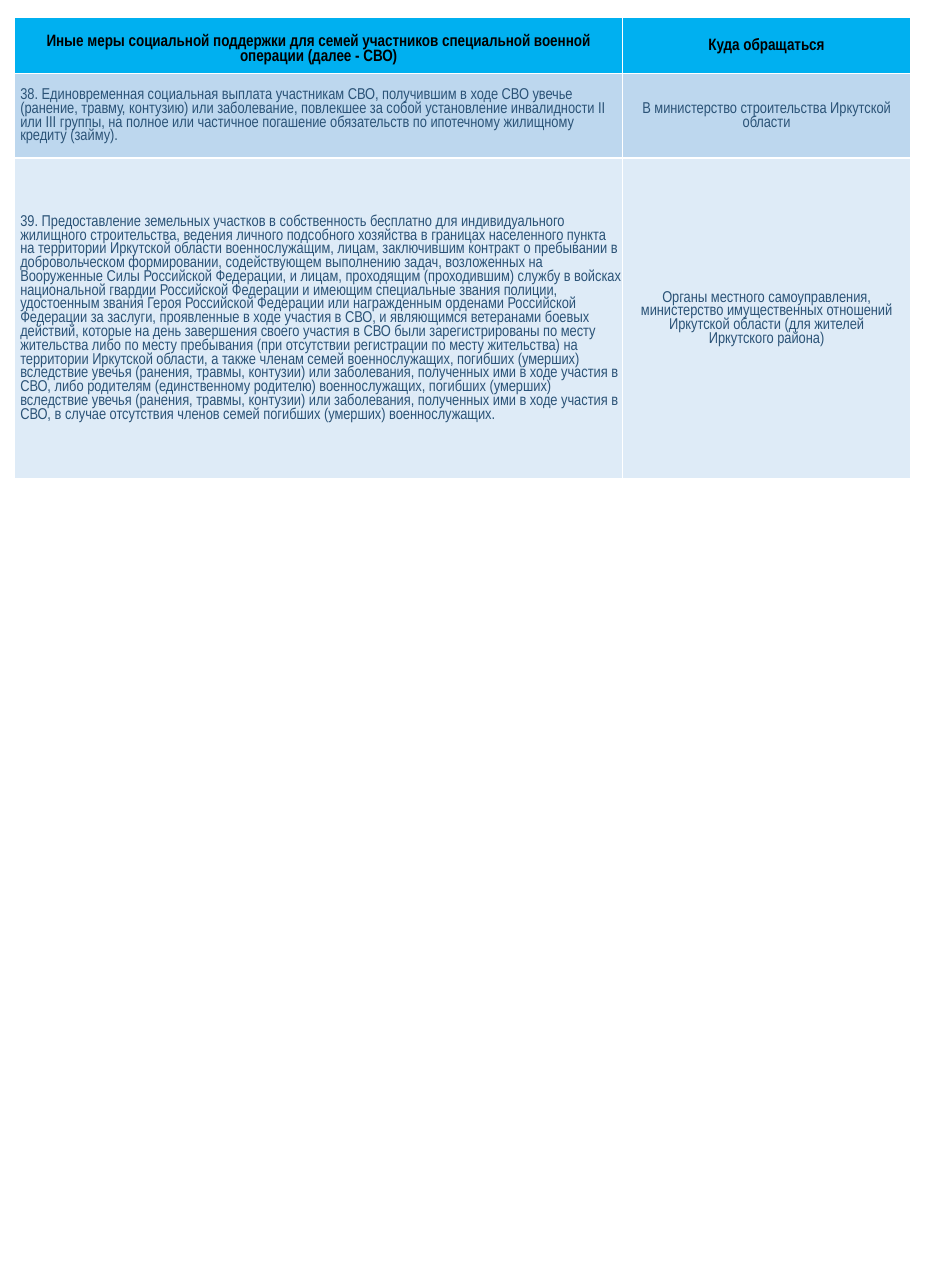
from lxml.etree import SubElement as Sub
from pptx import Presentation as Deck
from pptx.dml.color import RGBColor as Rgb
from pptx.enum.text import MSO_ANCHOR as Anchor, PP_ALIGN as Align
from pptx.oxml.ns import qn
from pptx.util import Inches, Pt

FONT = "Arial Narrow"
COLS = [5.39, 2.55]
ROWS = [0.5, 0.75, 2.84]
FILLS = ["00B0F0", "BDD7EE", "DEEBF7"]

HEADS = [
    "Иные меры социальной поддержки для семей участников специальной "
    "военной операции (далее - СВО)",
    "Куда обращаться",
]
PAYMENT = [
    "38. Единовременная социальная выплата участникам СВО, получившим в ходе "
    "СВО увечье (ранение, травму, контузию) или заболевание, повлекшее за собой "
    "установление инвалидности II или III группы, на полное или частичное "
    "погашение обязательств по ипотечному жилищному кредиту (займу).",
    "В министерство строительства Иркутской области",
]
# Clauses of the long measure, joined by spaces
CLAUSES = [
    "39. Предоставление земельных участков в собственность бесплатно для "
    "индивидуального жилищного строительства, ведения личного подсобного "
    "хозяйства в границах населенного пункта на территории Иркутской области",
    "военнослужащим, лицам, заключившим контракт о пребывании в добровольческом "
    "формировании, содействующем выполнению задач, возложенных на Вооруженные "
    "Силы Российской Федерации, и лицам, проходящим (проходившим) службу в "
    "войсках национальной гвардии Российской Федерации и имеющим специальные "
    "звания полиции,",
    "удостоенным звания Героя Российской Федерации или "
    "награжденным орденами Российской Федерации за заслуги, проявленные в ходе "
    "участия в СВО, и являющимся ветеранами боевых действий, которые на день "
    "завершения своего участия в СВО были зарегистрированы по месту жительства "
    "либо по месту пребывания (при отсутствии регистрации по месту жительства) "
    "на территории Иркутской области,",
    "а также членам семей военнослужащих, "
    "погибших (умерших) вследствие увечья (ранения, травмы, контузии) или "
    "заболевания, полученных ими в ходе участия в СВО,",
    "либо родителям "
    "(единственному родителю) военнослужащих, погибших (умерших) вследствие "
    "увечья (ранения, травмы, контузии) или заболевания, полученных ими в ходе "
    "участия в СВО, в случае отсутствия членов семей погибших (умерших) "
    "военнослужащих.",
]
LAND = [
    " ".join(CLAUSES),
    "Органы местного самоуправления, министерство имущественных отношений "
    "Иркутской области (для жителей\nИркутского района)",
]


def color(code):
    return Rgb.from_string(code)


def write(frame, text, size=10, ink="2B5377", bold=False, align=Align.LEFT):
    """Put each line of text in its own formatted paragraph."""
    frame.text = text
    for para in frame.paragraphs:
        para.alignment = align
        para.line_spacing = 0.95
        font = para.runs[0].font
        font.name, font.size, font.bold = FONT, Pt(size), bold
        font.color.rgb = color(ink)


def border(cell, code="FFFFFF", width=1):
    props = cell._tc.get_or_add_tcPr()
    for spot, side in enumerate(("lnL", "lnR", "lnT", "lnB")):
        line = Sub(props, qn(f"a:{side}"), w=str(Pt(width)))
        Sub(Sub(line, qn("a:solidFill")), qn("a:srgbClr"), val=code)
        props.insert(spot, line)


def paint(cell, code, left=0.01, top=0.01):
    """Set the fill, borders and insets of a cell."""
    cell.fill.solid()
    cell.fill.fore_color.rgb = color(code)
    border(cell)
    cell.vertical_anchor = Anchor.MIDDLE
    cell.margin_left, cell.margin_top = Inches(left), Inches(top)
    cell.margin_right, cell.margin_bottom = Inches(0.01), Inches(0)


def add_grid(slide):
    frame = slide.shapes.add_table(
        len(ROWS), len(COLS), Inches(0.13), Inches(0.15),
        Inches(sum(COLS)), Inches(sum(ROWS)))
    table = frame.table
    table.first_row = table.horz_banding = False
    for col, width in zip(table.columns, COLS):
        col.width = Inches(width)
    for row, height in zip(table.rows, ROWS):
        row.height = Inches(height)
    return table


def main():
    deck = Deck()
    deck.slide_width, deck.slide_height = Inches(8.27), Inches(11.42)
    slide = deck.slides.add_slide(deck.slide_layouts[6])
    table = add_grid(slide)

    # Header row: the long heading sits a little lower
    for cell, text, top in zip(table.rows[0].cells, HEADS, (0.08, 0.01)):
        paint(cell, FILLS[0], top=top)
        write(cell.text_frame, text, size=10.5, ink="000000", bold=True,
              align=Align.CENTER)

    # Support measures and where to apply
    for num, (measure, office) in enumerate((PAYMENT, LAND), 1):
        left, right = table.rows[num].cells
        paint(left, FILLS[num], left=0.05)
        write(left.text_frame, measure)
        paint(right, FILLS[num])
        write(right.text_frame, office, align=Align.CENTER)

    deck.save("out.pptx")


if __name__ == "__main__":
    main()
